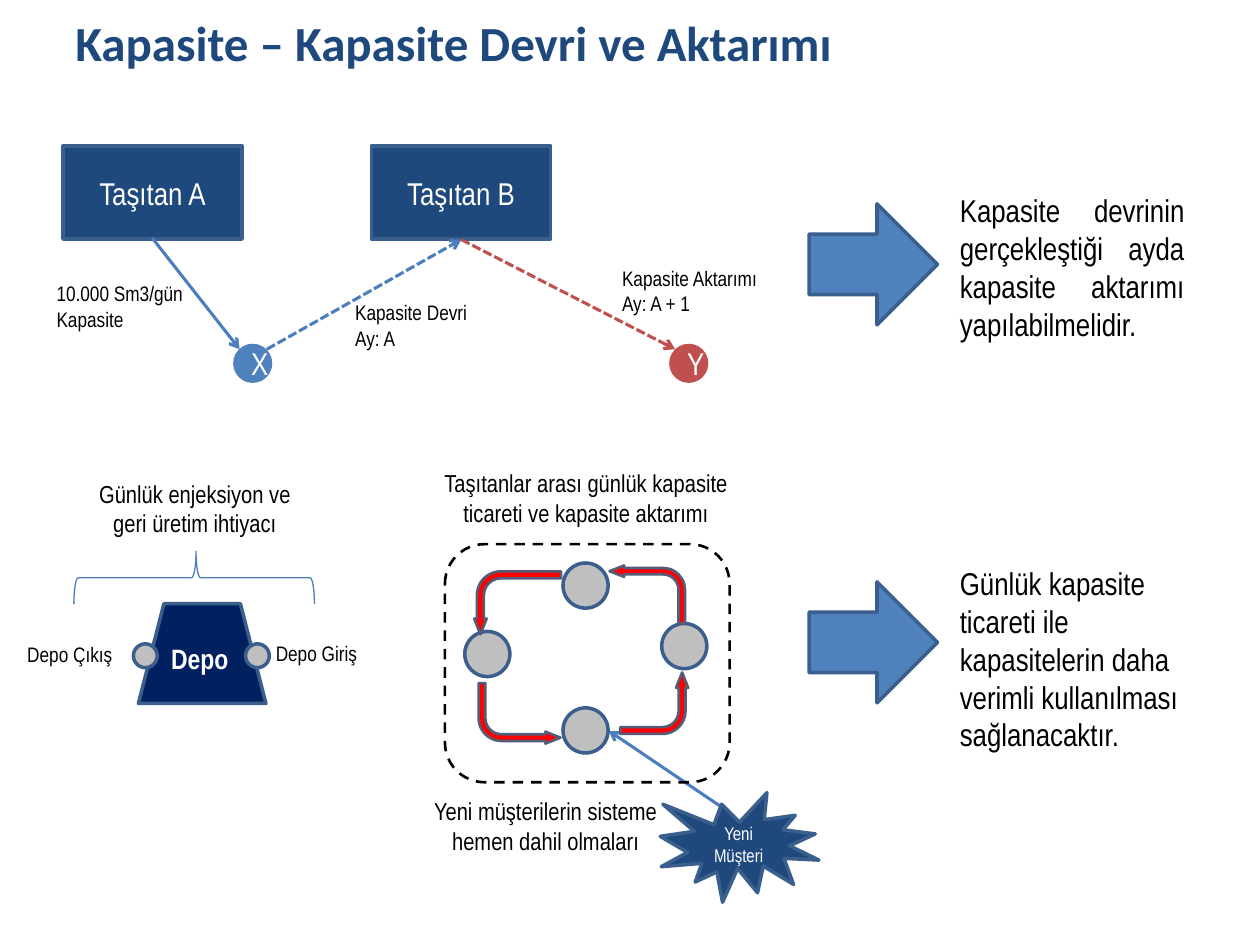
import pptx
import pptx.dml.color
import pptx.enum.dml
import pptx.enum.shapes
import pptx.enum.text
import pptx.oxml.ns
import pptx.util
from lxml import etree

Cm, Pt = pptx.util.Cm, pptx.util.Pt
RGB = pptx.dml.color.RGBColor
Kind = pptx.enum.shapes.MSO_SHAPE
Align = pptx.enum.text.PP_ALIGN
Dash = pptx.enum.dml.MSO_LINE
qn = pptx.oxml.ns.qn

NAVY = RGB(0x1F, 0x49, 0x7D)
DEEP = RGB(0x00, 0x20, 0x60)
BLUE = RGB(0x4F, 0x81, 0xBD)
EDGE = RGB(0x3A, 0x5F, 0x8C)
WIRE = RGB(0x4B, 0x7E, 0xBC)
BRICK = RGB(0xC0, 0x50, 0x4D)
RED = RGB(0xFF, 0x00, 0x00)
SLATE = RGB(0x54, 0x5C, 0x79)
GREY = RGB(0xBF, 0xBF, 0xBF)
BLACK = RGB(0x00, 0x00, 0x00)
WHITE = RGB(0xFF, 0xFF, 0xFF)


class Board:
    font = "Arial Narrow"

    def __init__(self, slide):
        self.slide = slide

    def letter(self, frame, text, size, color, align, bold=False, font=None):
        """Fill a text frame and format its runs."""
        frame.word_wrap = True
        frame.text = text
        for para in frame.paragraphs:
            para.alignment = align
            for run in para.runs:
                run.font.name = font or self.font
                run.font.size = Pt(size)
                run.font.bold = bold
                run.font.color.rgb = color

    def label(self, box, text, size=12, color=BLACK, align=Align.LEFT, **style):
        shape = self.slide.shapes.add_textbox(*map(Cm, box))
        self.letter(shape.text_frame, text, size, color, align, **style)

    def shape(self, kind, box, fill=None, edge=EDGE, width=2, dash=None,
              turn=0, flip=False, adjust=(), text="", size=18):
        shape = self.slide.shapes.add_shape(kind, *map(Cm, box))
        shape.shadow.inherit = False
        shape.rotation = turn
        for i, value in enumerate(adjust):
            shape.adjustments[i] = value
        if flip:
            shape.element.spPr.get_or_add_xfrm().set("flipH", "1")
        if fill is None:
            shape.fill.background()
        else:
            shape.fill.solid()
            shape.fill.fore_color.rgb = fill
        if edge is None:
            shape.line.fill.background()
        else:
            shape.line.color.rgb = edge
            shape.line.width = Pt(width)
            shape.line.dash_style = dash
        if text:
            frame = shape.text_frame
            frame.vertical_anchor = pptx.enum.text.MSO_ANCHOR.MIDDLE
            self.letter(frame, text, size, WHITE, Align.CENTER)

    def dot(self, left, top, size, fill=GREY, **style):
        self.shape(Kind.OVAL, (left, top, size, size), fill, **style)

    def arrow(self, start, end, color=WIRE, dash=None):
        line = self.slide.shapes.add_connector(
            pptx.enum.shapes.MSO_CONNECTOR.STRAIGHT, *map(Cm, start + end))
        line.line.color.rgb = color
        line.line.width = Pt(1.75)
        line.line.dash_style = dash
        props = line.element.spPr
        etree.SubElement(props.find(qn("a:ln")), qn("a:tailEnd"), type="arrow")
        etree.SubElement(props, qn("a:effectLst"))


def draw_transfer(board):
    """Upper half: capacity handed from shipper A to shipper B."""
    for left, name in ((1.27, "Taşıtan A"), (7.49, "Taşıtan B")):
        board.shape(Kind.RECTANGLE, (left, 2.94, 3.61, 1.88), NAVY, text=name)
    for left, color, name in ((4.7, BLUE, "X"), (13.49, BRICK, "Y")):
        board.dot(left, 6.93, 0.79, color, edge=None, text=name)

    hub = (9.3, 4.83)
    board.arrow((3.07, 4.8), (4.83, 7.04))
    board.arrow((5.38, 7.04), hub, dash=Dash.SQUARE_DOT)
    board.arrow(hub, (13.61, 7.04), BRICK, Dash.SQUARE_DOT)
    board.label((0.89, 5.54, 3.6, 1.27), "10.000 Sm3/gün\nKapasite")
    board.label((6.91, 5.92, 3.2, 1.27), "Kapasite Devri\nAy: A")
    board.label((12.29, 5.23, 3.99, 1.27), "Kapasite Aktarımı\nAy: A + 1")


def draw_depot(board):
    board.shape(Kind.FLOWCHART_MANUAL_OPERATION, (2.79, 12.17, 2.57, 2.01),
                DEEP, turn=180)
    board.label((3.2, 12.8, 2.13, 0.94), "Depo", 16, WHITE, bold=True)
    for left in (2.69, 4.95):
        board.dot(left, 12.98, 0.48)
    board.label((0.3, 12.8, 3.2, 0.76), "Depo Çıkış")
    board.label((5.31, 12.78, 2.39, 0.76), "Depo Giriş")
    board.shape(Kind.RIGHT_BRACE, (3.38, 9.22, 1.07, 4.85), edge=WIRE,
                width=0.75, turn=270, adjust=(0.083, 0.508))
    board.label((1.57, 9.53, 4.72, 1.45),
                "Günlük enjeksiyon ve geri üretim ihtiyacı", 14, align=Align.CENTER)


def draw_trade(board):
    """Ring of shippers trading daily, with a new customer joining."""
    board.arrow((14.71, 16.38), (12.27, 14.73))
    board.shape(Kind.EXPLOSION1, (13.31, 15.98, 3.2, 2.21), NAVY,
                text="Yeni Müşteri", size=10.5)
    for left, top in ((9.37, 12.73), (11.35, 11.35), (13.34, 12.57), (11.35, 14.27)):
        board.dot(left, top, 0.91)
    board.shape(Kind.ROUNDED_RECTANGLE, (8.97, 10.97, 5.74, 4.8), edge=BLACK,
                width=1.5, dash=Dash.DASH)
    bends = (
        (90, (12.57, 13.49, 1.24, 1.37)),
        (0, (12.29, 11.4, 1.52, 1.17)),
        (270, (9.8, 11.28, 1.27, 1.75)),
        (180, (9.65, 13.77, 1.65, 1.22)),
    )
    for turn, box in bends:
        board.shape(Kind.BENT_ARROW, box, RED, SLATE, 1.5, turn=turn, flip=True,
                    adjust=(0.111, 0.099, 0.25, 0.377))
    board.label((8.31, 9.32, 7.01, 1.45),
                "Taşıtanlar arası günlük kapasite ticareti ve kapasite aktarımı",
                14, align=Align.CENTER)
    board.label((7.9, 15.93, 6.2, 1.45),
                "Yeni müşterilerin sisteme hemen dahil olmaları",
                14, align=Align.CENTER)


def draw_results(board):
    for top in (4.11, 11.73):
        board.shape(Kind.RIGHT_ARROW, (16.31, top, 2.59, 2.44), BLUE)
    board.label((19.1, 3.73, 5.03, 3.33),
                "Kapasite devrinin gerçekleştiği ayda kapasite aktarımı "
                "yapılabilmelidir.", 18, align=Align.JUSTIFY)
    board.label((19.1, 11.25, 5.41, 4.11),
                "Günlük kapasite ticareti ile kapasitelerin daha verimli "
                "kullanılması sağlanacaktır.", 18)


def main():
    deck = pptx.Presentation()
    deck.slide_width, deck.slide_height = Cm(25.4), Cm(19.05)
    board = Board(deck.slides.add_slide(deck.slide_layouts[6]))
    board.label((1.27, 0.13, 22.86, 2.21), "Kapasite – Kapasite Devri ve Aktarımı",
                28, NAVY, bold=True, font="Calibri")
    draw_transfer(board)
    draw_depot(board)
    draw_trade(board)
    draw_results(board)
    deck.save("out.pptx")


if __name__ == "__main__":
    main()
